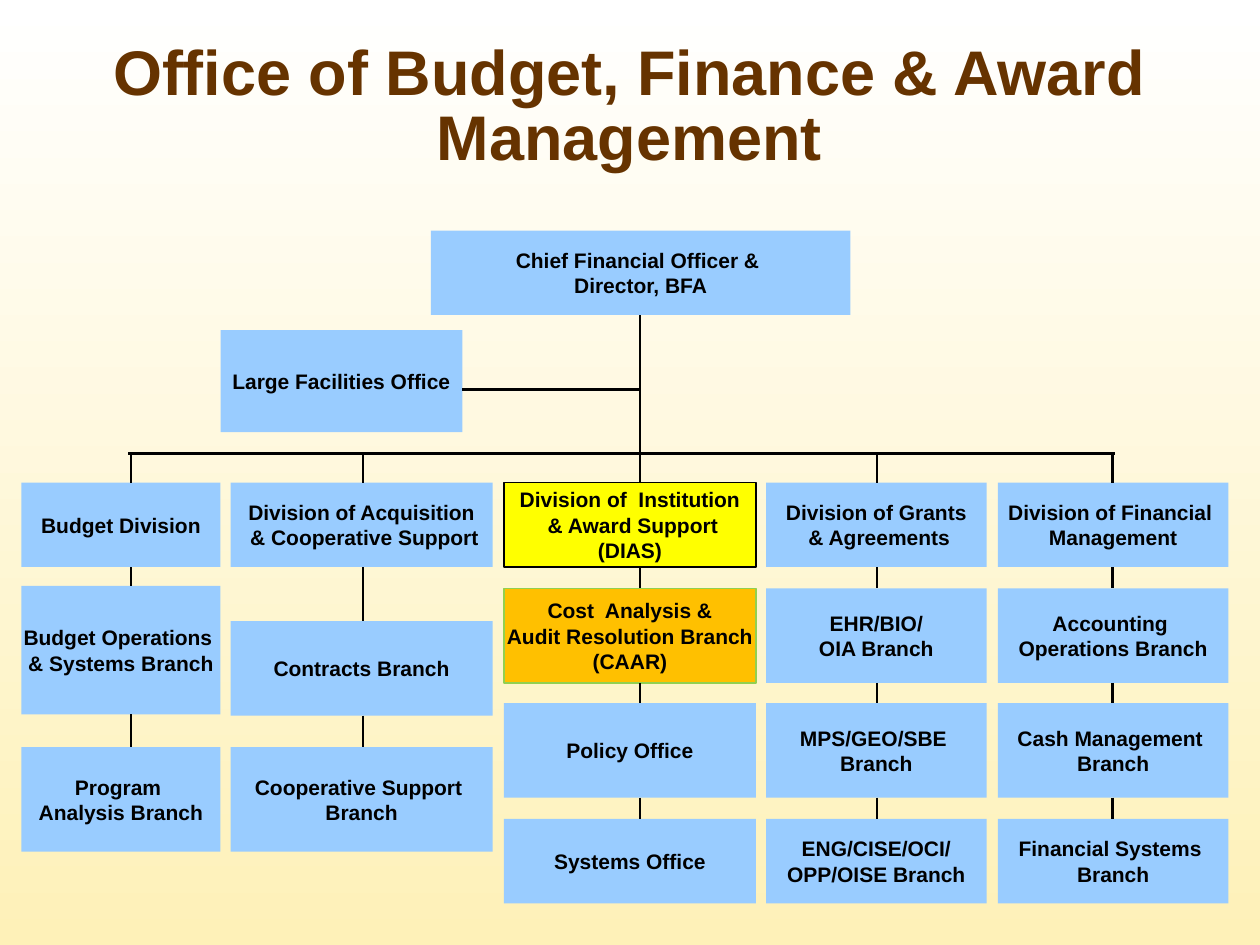
from dataclasses import dataclass
from itertools import pairwise
from lxml import etree
from pptx import Presentation
from pptx.dml.color import RGBColor
from pptx.enum.shapes import MSO_CONNECTOR as CONN, MSO_SHAPE as SHAPE
from pptx.enum.text import MSO_ANCHOR as ANCHOR, PP_ALIGN as ALIGN
from pptx.oxml.ns import qn
from pptx.util import Inches, Pt


@dataclass(frozen=True)
class Theme:
    font: str = "Arial"
    title_size: int = 36
    title_leading: int = 37
    box_size: int = 12
    outline: float = 0.75
    link: float = 1.5
    title: str = "663300"
    ink: str = "000000"
    box: str = "99CCFF"
    division: str = "FFFF00"
    branch: str = "FFC000"
    branch_line: str = "92D050"
    bg_top: str = "FFFFFF"
    bg_bottom: str = "FEF1B8"


@dataclass(frozen=True)
class Column:
    left: float
    width: float
    spine: float
    division: str
    branches: tuple


THEME = Theme()
BUS_Y = 3.6
DIVISION_ROW = (3.83, 0.67)
BRANCH_ROWS = ((4.67, 0.75), (5.58, 0.75), (6.5, 0.67))
LOWER_ROW = (5.93, 0.83)
HIGHLIGHTS = {
    "(DIAS)": (THEME.division, THEME.ink),
    "(CAAR)": (THEME.branch, THEME.branch_line),
}


def rows(*labels):
    return tuple(zip(BRANCH_ROWS, labels))


COLUMNS = (
    Column(0.17, 1.58, 1.04, "Budget Division", (
        ((4.65, 1.02), "Budget Operations \n& Systems Branch"),
        (LOWER_ROW, "Program \nAnalysis Branch"))),
    Column(1.83, 2.08, 2.88, "Division of Acquisition\n & Cooperative Support", (
        ((4.93, 0.75), "Contracts Branch"),
        (LOWER_ROW, "Cooperative Support \nBranch"))),
    Column(4, 2, 5.08, "Division of  Institution\n & Award Support\n(DIAS)", rows(
        "Cost  Analysis &\nAudit Resolution Branch\n(CAAR)",
        "Policy Office",
        "Systems Office")),
    Column(6.08, 1.75, 6.96, "Division of Grants\n & Agreements", rows(
        "EHR/BIO/\nOIA Branch",
        "MPS/GEO/SBE \nBranch",
        "ENG/CISE/OCI/\nOPP/OISE Branch")),
    Column(7.92, 1.83, 8.83, "Division of Financial \nManagement", rows(
        "Accounting \nOperations Branch",
        "Cash Management \nBranch",
        "Financial Systems \nBranch")),
)


def rgb(value):
    return RGBColor.from_string(value)


def add_text(p, text, size, color):
    p.alignment = ALIGN.CENTER
    r = p.add_run()
    r.text = text
    r.font.name = THEME.font
    r.font.size = Pt(size)
    r.font.bold = True
    r.font.color.rgb = rgb(color)


def set_background(s):
    fill = s.background.fill
    fill.gradient()
    fill.gradient_angle = 270
    colors = (THEME.bg_top, THEME.bg_bottom)
    for position, (stop, color) in enumerate(zip(fill.gradient_stops, colors)):
        stop.position = position
        stop.color.rgb = rgb(color)


def set_title(s, text):
    sp = s.shapes.title
    sp.left, sp.top = Inches(-0.17), Inches(0.42)
    sp.width, sp.height = Inches(10.33), Inches(0.88)
    tf = sp.text_frame
    tf.word_wrap = True
    tf.vertical_anchor = ANCHOR.MIDDLE
    p = tf.paragraphs[0]
    p.line_spacing = Pt(THEME.title_leading)
    add_text(p, text, THEME.title_size, THEME.title)


def add_box(s, left, top, width, height, text):
    sp = s.shapes.add_shape(SHAPE.RECTANGLE, Inches(left), Inches(top),
                            Inches(width), Inches(height))
    sp.shadow.inherit = False
    lines = text.split("\n")
    fill, outline = HIGHLIGHTS.get(lines[-1], (THEME.box, None))
    sp.fill.solid()
    sp.fill.fore_color.rgb = rgb(fill)
    if outline:
        sp.line.color.rgb = rgb(outline)
        sp.line.width = Pt(THEME.outline)
    else:
        sp.line.fill.background()
    tf = sp.text_frame
    tf.word_wrap = False
    tf.vertical_anchor = ANCHOR.MIDDLE
    for i, line in enumerate(lines):
        p = tf.add_paragraph() if i else tf.paragraphs[0]
        add_text(p, line, THEME.box_size, THEME.ink)


def add_link(s, x1, y1, x2, y2):
    link = s.shapes.add_connector(CONN.STRAIGHT, Inches(x1), Inches(y1),
                                  Inches(x2), Inches(y2))
    link.line.color.rgb = rgb(THEME.ink)
    link.line.width = Pt(THEME.link)
    etree.SubElement(link._element.spPr, qn("a:effectLst"))


def add_column(s, col):
    boxes = ((DIVISION_ROW, col.division), *col.branches)
    for (top, height), text in boxes:
        add_box(s, col.left, top, col.width, height, text)
    add_link(s, col.spine, BUS_Y, col.spine, DIVISION_ROW[0])
    for ((top, height), _), ((next_top, _), _) in pairwise(boxes):
        add_link(s, col.spine, top + height, col.spine, next_top)


def add_head(s):
    trunk = COLUMNS[2].spine
    add_box(s, 3.42, 1.83, 3.33, 0.67, "Chief Financial Officer & \nDirector, BFA")
    add_box(s, 1.75, 2.62, 1.92, 0.81, "Large Facilities Office")
    add_link(s, trunk, 2.5, trunk, BUS_Y)
    add_link(s, 3.67, 3.09, trunk, 3.09)
    add_link(s, COLUMNS[0].spine - 0.02, BUS_Y, COLUMNS[-1].spine + 0.02, BUS_Y)


def main():
    prs = Presentation()
    prs.slide_width, prs.slide_height = Inches(10), Inches(7.5)
    s = prs.slides.add_slide(prs.slide_layouts[5])
    set_background(s)
    set_title(s, "Office of Budget, Finance & Award Management")
    add_head(s)
    for col in COLUMNS:
        add_column(s, col)
    prs.save("out.pptx")


if __name__ == "__main__":
    main()
